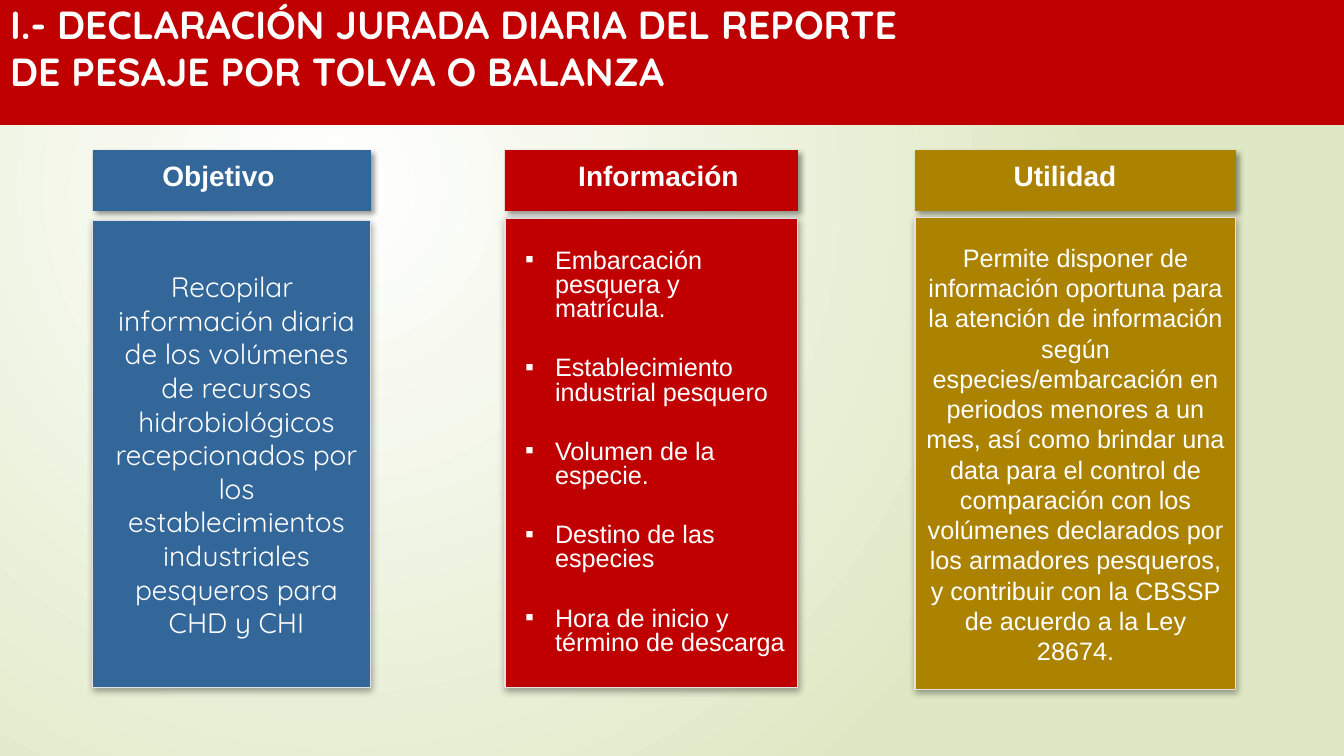
from lxml import etree
from pptx import Presentation
from pptx.dml.color import RGBColor
from pptx.enum.shapes import MSO_SHAPE
from pptx.enum.text import MSO_ANCHOR, MSO_AUTO_SIZE, PP_ALIGN
from pptx.oxml import parse_xml
from pptx.oxml.ns import qn
from pptx.util import Emu, Pt

RECTANGLE = MSO_SHAPE.RECTANGLE
TOP, MIDDLE = MSO_ANCHOR.TOP, MSO_ANCHOR.MIDDLE
LEFT, CENTER = PP_ALIGN.LEFT, PP_ALIGN.CENTER
NO_AUTOFIT = MSO_AUTO_SIZE.NONE

# Content
TITLE = ["I.- DECLARACIÓN JURADA DIARIA DEL REPORTE",
         "DE PESAJE POR TOLVA O BALANZA"]
COLUMNS = [
    {"heading": "Objetivo", "color": "336699", "x": 93, "width": 278,
     "label": (117, 203), "top": 221, "bottom": 688,
     "font": "Quicksand", "size": 20, "hang": (9, 9),
     "text": ["Recopilar información diaria de los volúmenes de recursos "
              "hidrobiológicos recepcionados por los establecimientos "
              "industriales pesqueros para CHD y CHI"]},
    {"heading": "Información", "color": "C00000", "x": 505, "width": 293,
     "label": (557, 203), "top": 218, "bottom": 688,
     "font": "Arial", "size": 18, "hang": (40, 30), "bullet": "▪",
     "text": ["Embarcación pesquera y matrícula.",
              "Establecimiento industrial pesquero",
              "Volumen de la especie.",
              "Destino de las especies",
              "Hora de inicio y término de descarga"]},
    {"heading": "Utilidad", "color": "AC8300", "x": 915, "width": 321,
     "label": (901, 328), "top": 218, "bottom": 690,
     "font": "Arial", "size": 18, "hang": (0, 0),
     "text": ["Permite disponer de información oportuna para la atención de "
              "información según especies/embarcación en periodos menores a "
              "un mes, así como brindar una data para el control de "
              "comparación con los volúmenes declarados por los armadores "
              "pesqueros, y contribuir con la CBSSP de acuerdo a la Ley "
              "28674."]},
]

# Layout and look
SLIDE_W, SLIDE_H, BAND_H = 1344, 756, 124
HEADING_Y, HEADING_H = 150, 61
LABEL_Y, LABEL_H = 166, 21
WHITE, RED, EDGE = "FFFFFF", "C00000", "E1E1E1"
HEADING_SHADOW = {"alpha": 40, "blur": 4, "dist": 3, "angle": 45}
PANEL_SHADOW = {"alpha": 35, "blur": 5, "dist": 1.8, "angle": 90}
BACKGROUND = """
<p:bg xmlns:p="http://schemas.openxmlformats.org/presentationml/2006/main"
      xmlns:a="http://schemas.openxmlformats.org/drawingml/2006/main">
  <p:bgPr><a:gradFill rotWithShape="1"><a:gsLst>
    <a:gs pos="0"><a:srgbClr val="FFFFFF"/></a:gs>
    <a:gs pos="100000"><a:srgbClr val="DFE8C4"/></a:gs></a:gsLst>
    <a:path path="circle">
      <a:fillToRect l="50000" t="50000" r="100000" b="100000"/></a:path>
  </a:gradFill><a:effectLst/></p:bgPr></p:bg>"""


def px(length):
    return Emu(round(length * 914400 / 100.8))


def rgb(value):
    return RGBColor.from_string(value)


def set_attributes(target, values):
    for name, value in values.items():
        setattr(target, name, value)


def place(shape, left, top, width, height):
    set_attributes(shape, {"left": px(left), "top": px(top),
                           "width": px(width), "height": px(height)})


def paint(shape, fill, line=None, line_width=0.75):
    shape.fill.solid()
    shape.fill.fore_color.rgb = rgb(fill)
    if line:
        shape.line.color.rgb = rgb(line)
        shape.line.width = Pt(line_width)
    else:
        shape.line.fill.background()


def add_shadow(shape, look):
    shape.shadow.inherit = False
    effects = shape.element.spPr.find(qn("a:effectLst"))
    shadow = etree.SubElement(
        effects, qn("a:outerShdw"), blurRad=str(Pt(look["blur"])),
        dist=str(Pt(look["dist"])), dir=str(look["angle"] * 60000),
        algn="ctr", rotWithShape="0")
    color = etree.SubElement(shadow, qn("a:srgbClr"), val="000000")
    etree.SubElement(color, qn("a:alpha"), val=str(look["alpha"] * 1000))


def write(shape, lines, frame_format, paragraph_format, font_format):
    frame = shape.text_frame
    set_attributes(frame, {"word_wrap": True, "auto_size": NO_AUTOFIT,
                           "vertical_anchor": MIDDLE, **frame_format})
    frame.text = "\n".join(lines)
    for paragraph in frame.paragraphs:
        set_attributes(paragraph, paragraph_format)
        set_attributes(paragraph.runs[0].font, font_format)
        paragraph.runs[0].font.color.rgb = rgb(WHITE)
    return frame.paragraphs


def add_heading(slide, column):
    box = slide.shapes.add_shape(RECTANGLE, 0, 0, 0, 0)
    place(box, column["x"], HEADING_Y, column["width"], HEADING_H)
    paint(box, column["color"])
    add_shadow(box, HEADING_SHADOW)

    label_x, label_w = column["label"]
    label = slide.shapes.add_textbox(0, 0, 0, 0)
    place(label, label_x, LABEL_Y, label_w, LABEL_H)
    write(label, [column["heading"]], {"margin_left": 0, "margin_right": 0},
          {"alignment": CENTER, "line_spacing": 0.95},
          {"name": "Arial", "size": Pt(20), "bold": True})


def add_panel(slide, column):
    bullet = column.get("bullet")
    if bullet:
        panel = slide.placeholders[1]
        layout = {"alignment": LEFT, "line_spacing": 0.8,
                  "space_before": Pt(25)}
    else:
        panel = slide.shapes.add_shape(RECTANGLE, 0, 0, 0, 0)
        layout = {"alignment": CENTER}
    place(panel, column["x"], column["top"], column["width"],
          column["bottom"] - column["top"])
    paint(panel, column["color"], EDGE)
    add_shadow(panel, PANEL_SHADOW)
    paragraphs = write(panel, column["text"], {}, layout,
                       {"name": column["font"], "size": Pt(column["size"])})
    paragraphs[0].space_before = Pt(3.6 if bullet else 0)

    # Hanging indent and bullet
    margin, hang = column["hang"]
    for paragraph in paragraphs:
        properties = paragraph._p.get_or_add_pPr()
        properties.set("marL", str(px(margin)))
        properties.set("indent", str(px(-hang)))
        if bullet:
            etree.SubElement(properties, qn("a:buFont"), typeface="Arial")
            etree.SubElement(properties, qn("a:buChar"), char=bullet)


def main():
    deck = Presentation()
    set_attributes(deck, {"slide_width": px(SLIDE_W),
                          "slide_height": px(SLIDE_H)})
    slide = deck.slides.add_slide(deck.slide_layouts[1])
    slide.element.cSld.insert(0, parse_xml(BACKGROUND))

    # Title band
    band = slide.shapes.title
    place(band, 0, 0, SLIDE_W, BAND_H)
    paint(band, RED, RED, 1.25)
    write(band, TITLE, {"vertical_anchor": TOP, "margin_top": 0},
          {"alignment": LEFT},
          {"name": "Quicksand", "size": Pt(28), "bold": True})

    # Three columns
    for column in COLUMNS:
        add_heading(slide, column)
        add_panel(slide, column)

    deck.save("out.pptx")


if __name__ == "__main__":
    main()
